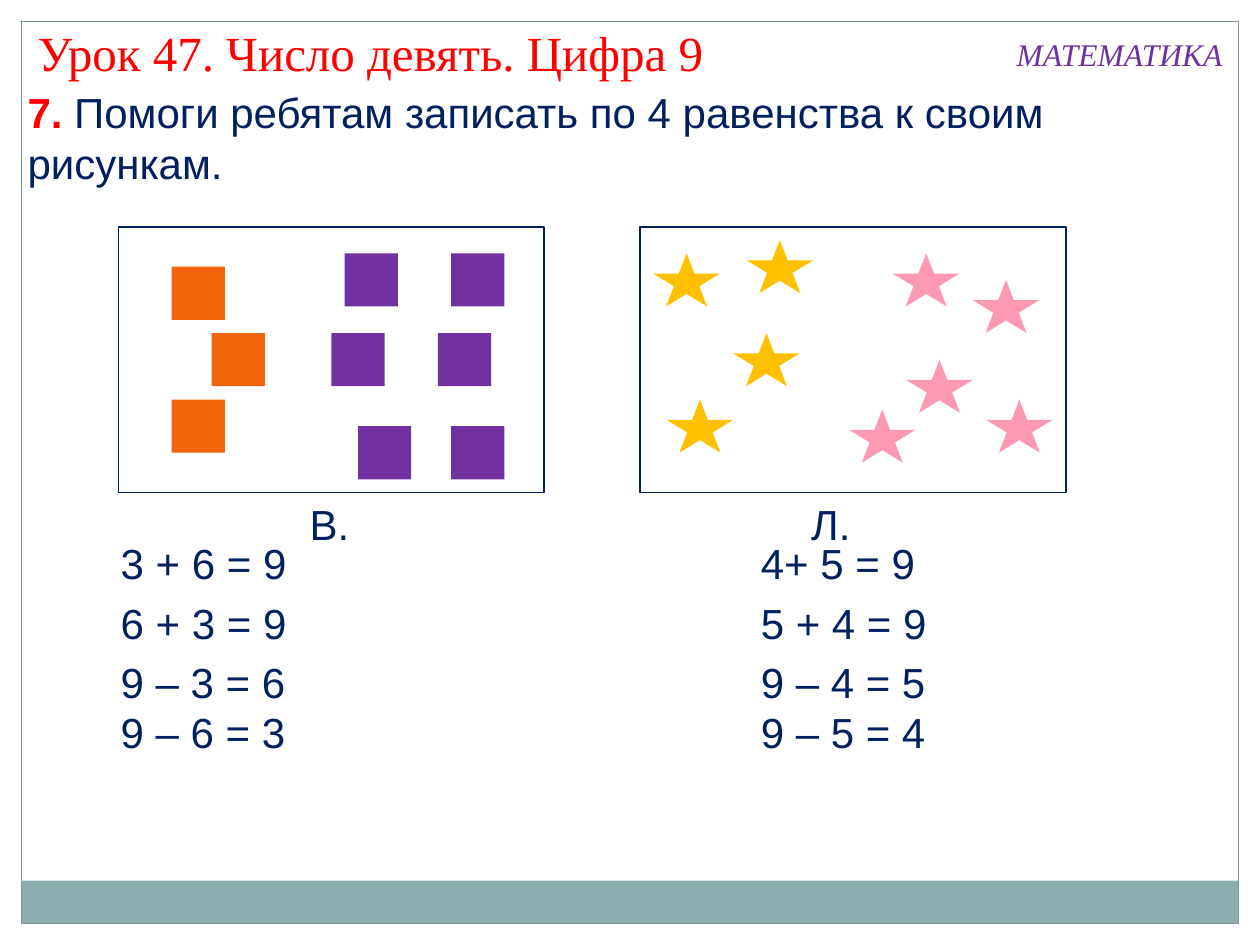
from pptx import Presentation
from pptx.dml.color import RGBColor
from pptx.enum.shapes import MSO_SHAPE as Preset
from pptx.enum.text import MSO_AUTO_SIZE as AutoSize
from pptx.util import Inches, Pt

WIDTH, HEIGHT = 10, 7.5
MARGIN = 0.17
FRAME_WIDTH, FRAME_HEIGHT = 3.38, 2.11
COLUMNS, ROWS = 32, 20
NAVY, RED, PURPLE = "002060", "FF0000", "7030A0"
ORANGE, GOLD, PINK = "F3650D", "FFC000", "FD99B3"
EQUATION_TOPS = (4.22, 4.69, 5.16, 5.56)


def color(hex_code):
    """Turn a hex string into a colour."""
    return RGBColor.from_string(hex_code)


def add_figure(slide, preset, box, fill=None, line=None, line_width=0.75):
    """Draw a flat preset shape in a box given in inches."""
    figure = slide.shapes.add_shape(preset, *map(Inches, box))
    figure.shadow.inherit = False
    if fill:
        figure.fill.solid()
        figure.fill.fore_color.rgb = color(fill)
    else:
        figure.fill.background()
    if line:
        figure.line.color.rgb = color(line)
        figure.line.width = Pt(line_width)
    else:
        figure.line.fill.background()


def add_text(slide, box, text, size=24, font="Arial", ink=NAVY, italic=False, wrap=True):
    """Write one paragraph in a text box and return the paragraph."""
    frame = slide.shapes.add_textbox(*map(Inches, box)).text_frame
    frame.word_wrap = wrap
    frame.auto_size = AutoSize.SHAPE_TO_FIT_TEXT
    paragraph = frame.paragraphs[0]
    paragraph.add_run().text = text
    paragraph.font.size = Pt(size)
    paragraph.font.name = font
    paragraph.font.italic = italic
    paragraph.font.color.rgb = color(ink)
    return paragraph


def add_page_border(slide):
    """Draw the white margins, the bottom band and the page outline."""
    inner_width, inner_height = WIDTH - 2 * MARGIN, HEIGHT - 2 * MARGIN
    for margin in ((0, 0, WIDTH, MARGIN),
                   (WIDTH - MARGIN, 0, MARGIN, HEIGHT),
                   (0, 0, MARGIN, HEIGHT)):
        add_figure(slide, Preset.RECTANGLE, margin, "FFFFFF")
    band = (MARGIN, HEIGHT - MARGIN - 0.34, inner_width, 0.34)
    add_figure(slide, Preset.RECTANGLE, band, "8CADAE")
    outline = (MARGIN, MARGIN, inner_width, inner_height)
    add_figure(slide, Preset.RECTANGLE, outline, line="7C999A")


def add_heading(slide):
    """Write the lesson title, the subject and the task."""
    task = add_text(slide, (0.12, 0.64, 9.88, 0.91), "7. ")
    task.runs[0].font.bold = True
    task.runs[0].font.color.rgb = color(RED)
    task.add_run().text = "Помоги ребятам записать по 4 равенства к своим рисункам."
    add_text(slide, (7.97, 0.23, 1.85, 0.4), "МАТЕМАТИКА", 18,
             "Times New Roman", PURPLE, italic=True, wrap=False)
    add_text(slide, (0.2, 0.13, 6.06, 0.57), "Урок 47. Число девять. Цифра 9",
             28, "Times New Roman", RED)


def add_counting_card(slide, box, preset, columns_wide, groups):
    """Draw a frame and its coloured groups of figures on a cell grid."""
    left, top, width, height = box
    column, row = width / COLUMNS, height / ROWS
    add_figure(slide, Preset.RECTANGLE, box, line=NAVY, line_width=0.9)
    for fill, cells in groups.items():
        for x, y in cells:
            place = (left + x * column, top + y * row, columns_wide * column, 4 * row)
            add_figure(slide, preset, place, fill)


def add_answers(slide, label, label_left, equations, equations_left):
    """Write a child's initial and the equations below it."""
    add_text(slide, (label_left, 3.91, 0.7, 0.5), label)
    for top, equation in zip(EQUATION_TOPS, equations):
        add_text(slide, (equations_left, top, 1.88, 0.5), equation)


def main():
    """Build the lesson slide and save it."""
    deck = Presentation()
    deck.slide_width, deck.slide_height = Inches(WIDTH), Inches(HEIGHT)
    slide = deck.slides.add_slide(deck.slide_layouts[6])
    add_page_border(slide)
    add_counting_card(
        slide, (0.94, 1.8, FRAME_WIDTH, FRAME_HEIGHT), Preset.RECTANGLE, 4,
        {ORANGE: [(4, 3), (7, 8), (4, 13)],
         PURPLE: [(17, 2), (16, 8), (24, 8), (25, 2), (25, 15), (18, 15)]})
    add_counting_card(
        slide, (5.08, 1.8, FRAME_WIDTH, FRAME_HEIGHT), Preset.STAR_5_POINT, 5,
        {GOLD: [(1, 2), (8, 1), (7, 8), (2, 13)],
         PINK: [(19, 2), (25, 4), (20, 10), (26, 13), (15.7, 13.75)]})
    add_answers(slide, "В.", 2.36,
                ("3 + 6 = 9", "6 + 3 = 9", "9 – 3 = 6", "9 – 6 = 3"), 0.86)
    add_answers(slide, "Л.", 6.34,
                ("4+ 5 = 9", "5 + 4 = 9", "9 – 4 = 5", "9 – 5 = 4"), 5.94)
    add_heading(slide)
    deck.save("out.pptx")


if __name__ == "__main__":
    main()
